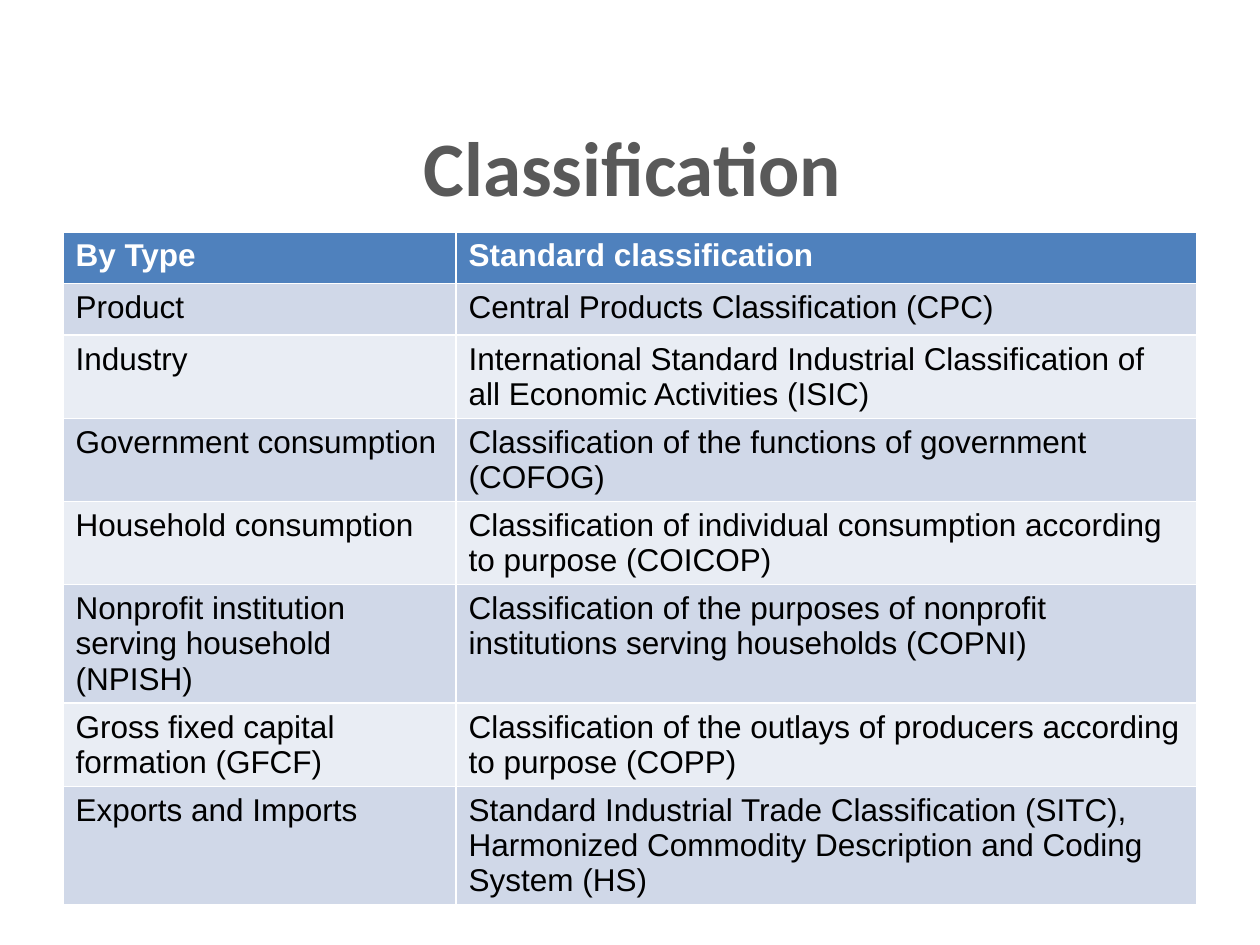
"""Build the slide that lists standard classifications by type."""
from typing import NamedTuple

from lxml.etree import SubElement
from pptx import Presentation
from pptx.dml.color import RGBColor
from pptx.enum.text import MSO_ANCHOR, PP_ALIGN
from pptx.oxml.ns import qn
from pptx.util import Inches, Pt

HEADER_FILL = "4F81BD"
BAND_FILLS = ("D0D8E8", "E9EDF4")
COLUMN_WIDTHS = (3.12, 5.88)
ROW_HEIGHT = 0.41


class Entry(NamedTuple):
    subject: str
    standard: str


HEADER = Entry("By Type", "Standard classification")
ENTRIES = (
    Entry("Product", "Central Products Classification (CPC)"),
    Entry("Industry",
          "International Standard Industrial Classification of all Economic Activities (ISIC)"),
    Entry("Government consumption", "Classification of the functions of government (COFOG)"),
    Entry("Household consumption",
          "Classification of individual consumption according to purpose (COICOP)"),
    Entry("Nonprofit institution serving household (NPISH)",
          "Classification of the purposes of nonprofit institutions serving households (COPNI)"),
    Entry("Gross fixed capital formation (GFCF)",
          "Classification of the outlays of producers according to purpose (COPP)"),
    Entry("Exports and Imports",
          "Standard Industrial Trade Classification (SITC), "
          "Harmonized Commodity Description and Coding System (HS)"),
)


def paint(fill, color: str) -> None:
    fill.solid()
    fill.fore_color.rgb = RGBColor.from_string(color)


def style_font(font, name: str, size: int, color: str, bold: bool) -> None:
    font.name, font.size, font.bold = name, Pt(size), bold
    paint(font.fill, color)


def format_title(title, heading: str) -> None:
    title.left, title.top = Inches(0.59), Inches(0.69)
    title.width, title.height = Inches(9), Inches(1.25)
    paint(title.fill, "FFFFFF")
    white = title.fill._xPr.find(f"{qn('a:solidFill')}/{qn('a:srgbClr')}")
    SubElement(white, qn("a:alpha"), val="60000")
    title.text_frame.text = heading
    title.text_frame.vertical_anchor = MSO_ANCHOR.MIDDLE
    paragraph = title.text_frame.paragraphs[0]
    paragraph.alignment = PP_ALIGN.CENTER
    style_font(paragraph.font, "Calibri", 44, "595959", True)


def fill_row(row, entry: Entry, fill: str, color: str, bold: bool) -> None:
    row.height = Inches(ROW_HEIGHT)
    for cell, wording in zip(row.cells, entry):
        cell.text = wording
        paint(cell.fill, fill)
        style_font(cell.text_frame.paragraphs[0].font, "Arial", 18, color, bold)


def add_classifications(slide) -> None:
    row_count = len(ENTRIES) + 1
    classifications = slide.shapes.add_table(
        row_count, len(COLUMN_WIDTHS), Inches(0.5), Inches(1.84),
        Inches(sum(COLUMN_WIDTHS)), Inches(ROW_HEIGHT * row_count)).table
    for column, width in zip(classifications.columns, COLUMN_WIDTHS):
        column.width = Inches(width)
    fill_row(classifications.rows[0], HEADER, HEADER_FILL, "FFFFFF", True)
    for index, entry in enumerate(ENTRIES):
        fill_row(classifications.rows[index + 1], entry, BAND_FILLS[index % 2], "000000", False)


def main() -> None:
    presentation = Presentation()
    presentation.slide_width, presentation.slide_height = Inches(10), Inches(7.5)
    slide = presentation.slides.add_slide(presentation.slide_layouts.get_by_name("Title Only"))
    format_title(slide.shapes.title, "Classification ")
    add_classifications(slide)
    presentation.save("out.pptx")


if __name__ == "__main__":
    main()
